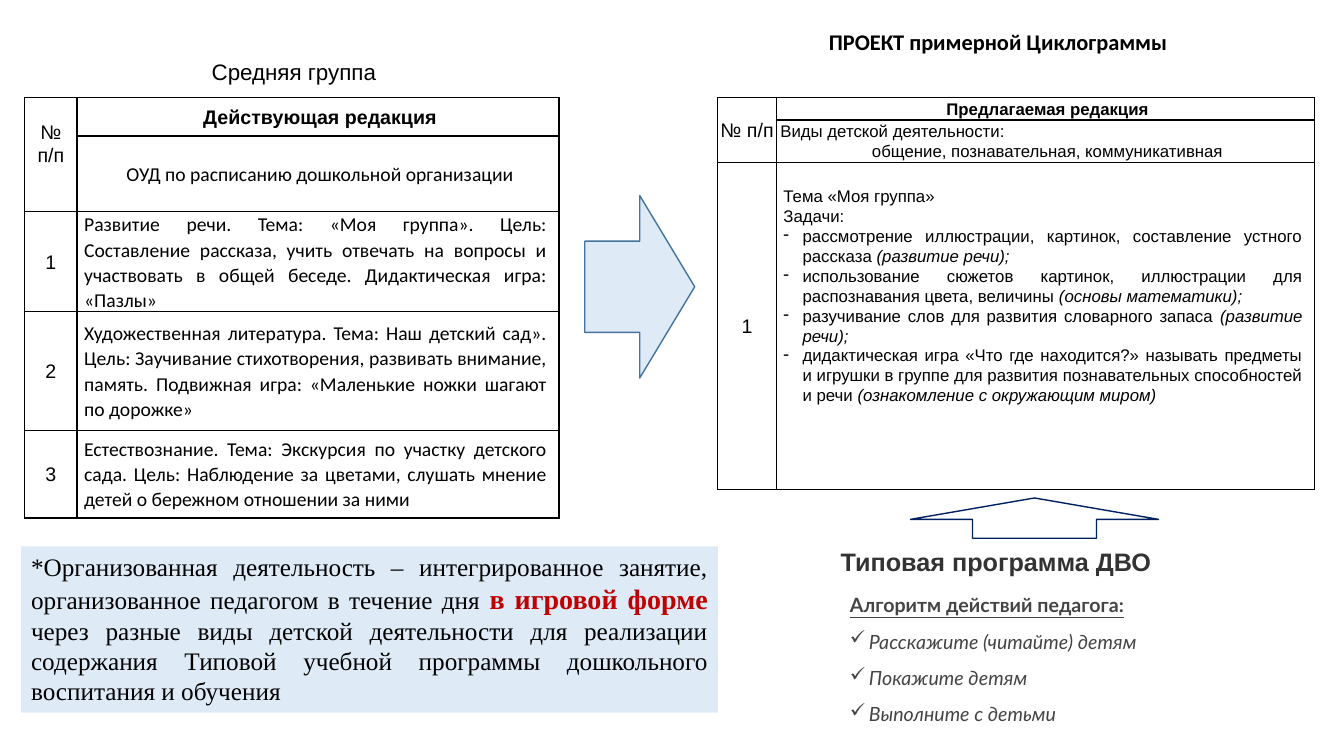
from dataclasses import dataclass

from lxml.etree import SubElement
from pptx import Presentation
from pptx.dml.color import RGBColor
from pptx.enum.shapes import MSO_SHAPE
from pptx.enum.text import MSO_ANCHOR, MSO_AUTO_SIZE, PP_ALIGN
from pptx.oxml.ns import qn
from pptx.util import Inches, Pt

COLORS = {
    "black": "000000", "white": "FFFFFF", "pale": "DEEBF7", "steel": "43739E",
    "navy": "002060", "red": "C00000", "heading": "333333", "advice": "444444",
}
COLUMN = Inches(0.1)
ROW = Inches(0.1)
CENTER, JUSTIFY, LEFT = PP_ALIGN.CENTER, PP_ALIGN.JUSTIFY, PP_ALIGN.LEFT


@dataclass(frozen=True)
class Words:
    text: str
    size: int = 14
    font: str = "Arial"
    color: str = "black"
    bold: bool = False
    italic: bool = False
    underline: bool = False


@dataclass(frozen=True)
class Line:
    words: tuple[Words, ...]
    align: PP_ALIGN = LEFT
    spacing: float = 1.0
    after: int = 0
    margin: float = 0
    indent: float = 0
    right: float = 0
    bullet: str = ""


@dataclass(frozen=True)
class Place:
    column: float
    row: float
    columns: float
    rows: float

    def box(self) -> tuple[int, int, int, int]:
        return (round(self.column * COLUMN), round(self.row * ROW),
                round(self.columns * COLUMN), round(self.rows * ROW))


@dataclass(frozen=True)
class Entry:
    row: int
    column: int
    lines: tuple[Line, ...]
    rows_spanned: int = 1
    bottom: float = 0


@dataclass(frozen=True)
class Plan:
    place: Place
    columns: tuple[float, ...]
    rows: tuple[float, ...]
    entries: tuple[Entry, ...]


@dataclass(frozen=True)
class Block:
    place: Place
    preset: MSO_SHAPE
    fill: str
    line: str = ""
    rotation: int = 0
    adjustments: tuple[float, ...] = ()
    lines: tuple[Line, ...] = ()


def rgb(name: str) -> RGBColor:
    return RGBColor.from_string(COLORS[name])


def write(frame, lines: tuple[Line, ...]) -> None:
    frame.word_wrap = True
    for index, line in enumerate(lines):
        paragraph = frame.add_paragraph() if index else frame.paragraphs[0]
        paragraph.alignment = line.align
        paragraph.line_spacing = line.spacing
        paragraph.space_before = Pt(0)
        paragraph.space_after = Pt(line.after)
        properties = paragraph._p.get_or_add_pPr()
        for key, length in (("marL", line.margin), ("marR", line.right), ("indent", line.indent)):
            properties.set(key, str(Inches(length)))
        if line.bullet:
            SubElement(properties, qn("a:buChar")).set("char", line.bullet)
        for words in line.words:
            run = paragraph.add_run()
            run.text = words.text
            font = run.font
            font.size, font.name = Pt(words.size), words.font
            font.bold, font.italic, font.underline = words.bold, words.italic, words.underline
            font.color.rgb = rgb(words.color)


def draw_text(slide, place: Place, *lines: Line) -> None:
    write(slide.shapes.add_textbox(*place.box()).text_frame, lines)


def draw_title(slide, place: Place, line: Line) -> None:
    title = slide.shapes.title
    title.left, title.top, title.width, title.height = place.box()
    title.text_frame.auto_size = MSO_AUTO_SIZE.NONE
    title.text_frame.vertical_anchor = MSO_ANCHOR.TOP
    write(title.text_frame, (line,))


def draw_block(slide, block: Block) -> None:
    shape = slide.shapes.add_shape(block.preset, *block.place.box())
    shape.shadow.inherit = False
    shape.rotation = block.rotation
    for index, share in enumerate(block.adjustments):
        shape.adjustments[index] = share
    shape.fill.solid()
    shape.fill.fore_color.rgb = rgb(block.fill)
    if block.line:
        shape.line.color.rgb = rgb(block.line)
        shape.line.width = Pt(1)
    else:
        shape.line.fill.background()
    if block.lines:
        shape.text_frame.vertical_anchor = MSO_ANCHOR.TOP
        write(shape.text_frame, block.lines)


def frame_cell(cell) -> None:
    properties = cell._tc.get_or_add_tcPr()
    for side in ("a:lnL", "a:lnR", "a:lnT", "a:lnB"):
        border = SubElement(properties, qn(side), w=str(Pt(1)))
        SubElement(SubElement(border, qn("a:solidFill")), qn("a:srgbClr"), val=COLORS["black"])
    cell.fill.background()
    cell.margin_left = cell.margin_right = cell.margin_top = cell.margin_bottom = 0
    cell.vertical_anchor = MSO_ANCHOR.MIDDLE


def draw_table(slide, plan: Plan) -> None:
    table = slide.shapes.add_table(len(plan.rows), len(plan.columns), *plan.place.box()).table
    table.first_row = table.horz_banding = False
    for column, width in zip(table.columns, plan.columns):
        column.width = round(width * COLUMN)
    for row, height in zip(table.rows, plan.rows):
        row.height = round(height * ROW)
    for cell in table.iter_cells():
        frame_cell(cell)
    for entry in plan.entries:
        cell = table.cell(entry.row, entry.column)
        if entry.rows_spanned > 1:
            cell.merge(table.cell(entry.row + entry.rows_spanned - 1, entry.column))
        cell.margin_bottom = Inches(entry.bottom)
        write(cell.text_frame, entry.lines)


def number(text: str) -> tuple[Line, ...]:
    return (Line((Words(text),), CENTER, 1.06),)


def header(words: Words, align: PP_ALIGN = CENTER) -> Line:
    return Line((words,), align, 1.06, indent=0.04)


def lesson(*words: Words) -> Line:
    return Line(words, JUSTIFY, 1.06, margin=0.07, right=0.12)


def task(goal: str, area: str) -> Line:
    return Line((Words(goal + " ", 12), Words(area, 12, italic=True)), JUSTIFY, 1.06,
                margin=0.26, indent=-0.19, right=0.12, bullet="-")


def advice(text: str) -> Line:
    return Line((Words(text, 14, "Lato", "advice", italic=True),), spacing=1.07, after=8,
                margin=0.19, indent=-0.19, bullet="✓")


LESSONS = (
    "Развитие речи. Тема: «Моя группа». Цель: Составление рассказа, учить отвечать на вопросы и участвовать в общей беседе. Дидактическая игра: «Пазлы»",
    "Художественная литература. Тема: Наш детский сад». Цель: Заучивание стихотворения, развивать внимание, память. Подвижная игра: «Маленькие ножки шагают по дорожке»",
    "Естествознание. Тема: Экскурсия по участку детского сада. Цель: Наблюдение за цветами, слушать мнение детей о бережном отношении за ними",
)
TASKS = (
    ("рассмотрение иллюстрации, картинок, составление устного рассказа", "(развитие речи);"),
    ("использование сюжетов картинок, иллюстрации для распознавания цвета, величины", "(основы математики);"),
    ("разучивание слов для развития словарного запаса", "(развитие речи);"),
    ("дидактическая игра «Что где находится?» называть предметы и игрушки в группе для развития познавательных способностей и речи", "(ознакомление с окружающим миром)"),
)
STEPS = ("Расскажите (читайте) детям", "Покажите детям", "Выполните с детьми")

CURRENT = Plan(Place(2.45, 9.7, 53, 41.7), (5.2, 47.8), (3.8, 7.5, 9.9, 11.8, 8.7), (
    Entry(0, 0, number("№ п/п"), 2, 0.22),
    Entry(0, 1, (header(Words("Действующая редакция", bold=True)),)),
    Entry(1, 1, (header(Words("ОУД по расписанию дошкольной организации", font="Calibri")),)),
    *(Entry(row, 0, number(str(row - 1))) for row in range(2, 5)),
    *(Entry(row, 1, (lesson(Words(text, font="Calibri")),)) for row, text in enumerate(LESSONS, 2)),
))
PROPOSED = Plan(Place(71.2, 9.7, 59.2, 38.6), (5.8, 53.4), (2.2, 4, 32.4), (
    Entry(0, 0, number("№ п/п"), 2),
    Entry(0, 1, (header(Words("Предлагаемая редакция", 12, bold=True)),)),
    Entry(1, 1, (header(Words("Виды детской деятельности:", 12), JUSTIFY),
                 header(Words("общение, познавательная, коммуникативная", 12)))),
    Entry(2, 0, number("1")),
    Entry(2, 1, (lesson(Words("Тема «Моя группа»", 12)), lesson(Words("Задачи:", 12)),
                 *(task(goal, area) for goal, area in TASKS)), bottom=0.6),
))
DEFINITION = Line((
    Words("*Организованная деятельность – интегрированное занятие, организованное педагогом в течение дня ", 18, "Times New Roman"),
    Words("в игровой форме ", 20, "Times New Roman", "red", bold=True),
    Words("через разные виды детской деятельности для реализации содержания Типовой учебной программы дошкольного воспитания и обучения", 18, "Times New Roman"),
), JUSTIFY)
BLOCKS = (
    Block(Place(90.3, 49.4, 24.6, 4), MSO_SHAPE.DOWN_ARROW, "white", "navy", 180, (0.5, 0.53)),
    Block(Place(2.1, 54.2, 69.1, 16.5), MSO_SHAPE.RECTANGLE, "pale", lines=(DEFINITION,)),
    Block(Place(58, 19.4, 10.9, 18.1), MSO_SHAPE.RIGHT_ARROW, "pale", "steel"),
)


def main() -> None:
    deck = Presentation()
    deck.slide_width, deck.slide_height = Inches(13.33), Inches(7.5)
    slide = deck.slides.add_slide(deck.slide_layouts[5])
    draw_title(slide, Place(68.2, 2.3, 61.6, 3.7),
               Line((Words("ПРОЕКТ примерной Циклограммы", 16, "Calibri", bold=True),), CENTER))
    draw_text(slide, Place(19.4, 5.1, 19.1, 3.7), header(Words("Средняя группа", 16)))
    for plan in (PROPOSED, CURRENT):
        draw_table(slide, plan)
    for block in BLOCKS:
        draw_block(slide, block)
    draw_text(slide, Place(82.4, 53.7, 48, 4),
              Line((Words("Типовая программа ДВО", 18, color="heading", bold=True),)))
    algorithm = Words("Алгоритм действий педагога:", 14, "Lato", "advice", bold=True, underline=True)
    draw_text(slide, Place(83.3, 58.2, 38.5, 14.3), Line((algorithm,), spacing=1.07, after=8),
              *(advice(step) for step in STEPS))
    deck.save("out.pptx")


if __name__ == "__main__":
    main()
